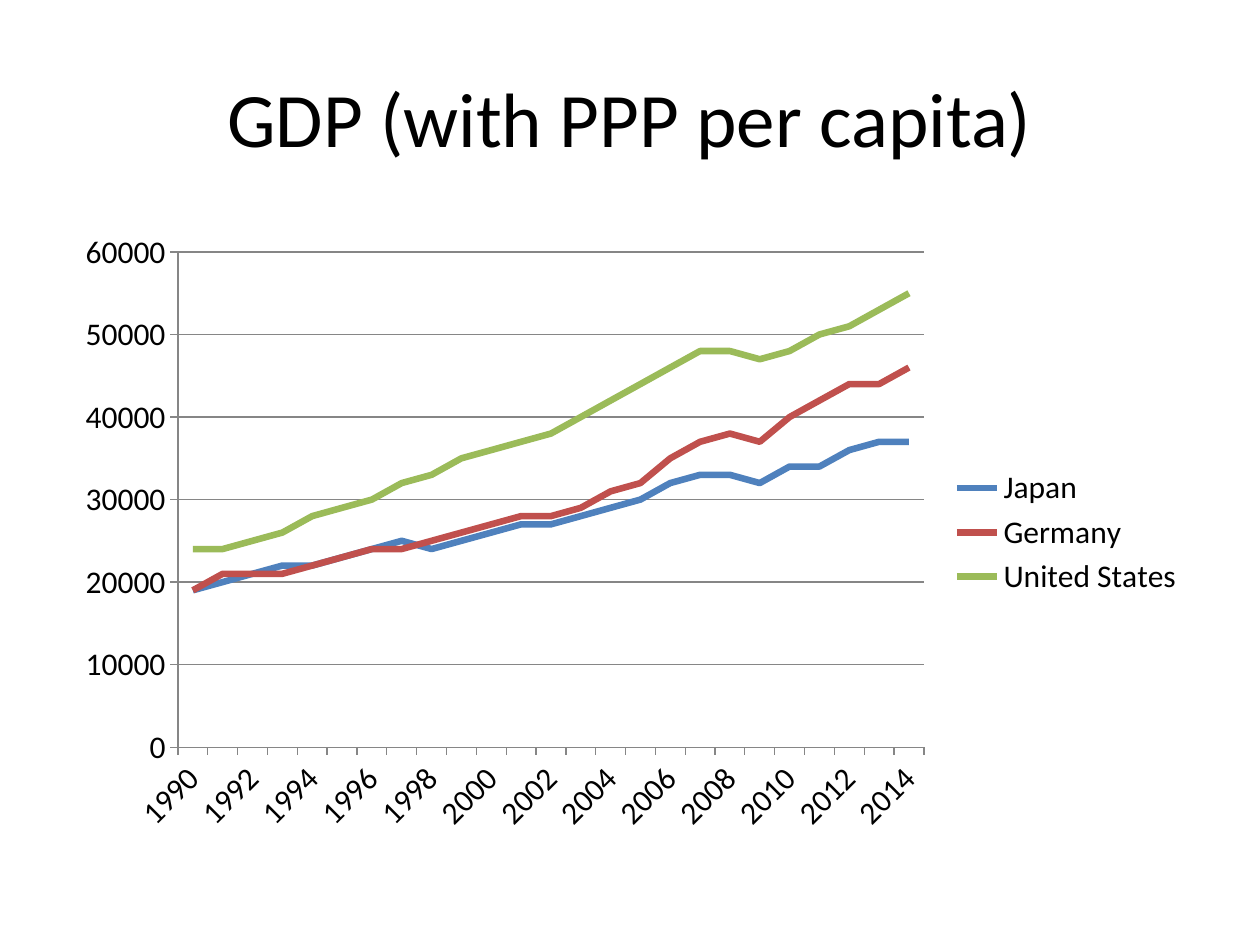
"""Build a slide with a line chart of GDP per capita in three countries."""
from pptx import Presentation
from pptx.chart.data import CategoryChartData
from pptx.dml.color import RGBColor
from pptx.enum.chart import XL_CHART_TYPE, XL_LEGEND_POSITION, XL_MARKER_STYLE, XL_TICK_MARK
from pptx.enum.text import MSO_ANCHOR, PP_ALIGN
from pptx.util import Inches, Pt

TITLE = "GDP (with PPP per capita)"
YEARS = [str(year) for year in range(1990, 2015)]
GDP_IN_THOUSANDS = {
    "Japan": [
        19, 20, 21, 22, 22, 23, 24, 25, 24, 25, 26, 27, 27,
        28, 29, 30, 32, 33, 33, 32, 34, 34, 36, 37, 37],
    "Germany": [
        19, 21, 21, 21, 22, 23, 24, 24, 25, 26, 27, 28, 28,
        29, 31, 32, 35, 37, 38, 37, 40, 42, 44, 44, 46],
    "United States": [
        24, 24, 25, 26, 28, 29, 30, 32, 33, 35, 36, 37, 38,
        40, 42, 44, 46, 48, 48, 47, 48, 50, 51, 53, 55],
}
THEME = {
    "font": "Calibri", "text": "000000", "axis": "868686",
    "series": ["4F81BD", "C0504D", "9BBB59"],
    "title_size": 44, "chart_size": 18, "series_width": 3.75, "axis_width": 0.75,
}
WIDTH, HEIGHT = Inches(10), Inches(7.5)
TITLE_BOX = (0.05, 0.04, 0.9, 1 / 6)
CHART_BOX = (0.05, 7 / 30, 0.9, 0.66)


def place(left, top, width, height):
    """Turn shares of the slide into lengths."""
    return int(left * WIDTH), int(top * HEIGHT), int(width * WIDTH), int(height * HEIGHT)


def style_font(font, size):
    """Apply the theme's typeface and text colour."""
    font.name = THEME["font"]
    font.size = Pt(size)
    font.color.rgb = RGBColor.from_string(THEME["text"])


def style_line(line, color, width):
    """Set the colour and width of a line."""
    line.color.rgb = RGBColor.from_string(color)
    line.width = Pt(width)


def add_text(slide, text, box, size, align):
    """Add a wrapped, vertically centred text box."""
    frame = slide.shapes.add_textbox(*place(*box)).text_frame
    frame.word_wrap = True
    frame.vertical_anchor = MSO_ANCHOR.MIDDLE
    paragraph = frame.paragraphs[0]
    paragraph.alignment = align
    run = paragraph.add_run()
    run.text = text
    style_font(run.font, size)


def add_gdp_chart(slide):
    """Add the line chart with its axes and legend."""
    data = CategoryChartData(number_format="General")
    data.categories = YEARS
    for country, thousands in GDP_IN_THOUSANDS.items():
        data.add_series(country, [value * 1000 for value in thousands])
    chart = slide.shapes.add_chart(XL_CHART_TYPE.LINE, *place(*CHART_BOX), data).chart
    style_font(chart.font, THEME["chart_size"])
    chart.has_title = False
    chart.has_legend = True
    chart.legend.position = XL_LEGEND_POSITION.RIGHT
    chart.legend.include_in_layout = False
    chart.plots[0].vary_by_categories = False
    for series, color in zip(chart.plots[0].series, THEME["series"]):
        series.smooth = False
        series.marker.style = XL_MARKER_STYLE.NONE
        style_line(series.format.line, color, THEME["series_width"])

    value_axis, category_axis = chart.value_axis, chart.category_axis
    value_axis.minimum_scale, value_axis.maximum_scale = 0, 60000
    value_axis.major_unit = 10000
    value_axis.has_major_gridlines = True
    for axis in (value_axis, category_axis):
        axis.major_tick_mark = XL_TICK_MARK.OUTSIDE
        style_font(axis.tick_labels.font, THEME["chart_size"])
    for part in (value_axis, category_axis, value_axis.major_gridlines):
        style_line(part.format.line, THEME["axis"], THEME["axis_width"])
    category_axis._element.txPr.bodyPr.set("rot", "-2700000")


def main():
    """Create and save the presentation."""
    presentation = Presentation()
    presentation.slide_width, presentation.slide_height = WIDTH, HEIGHT
    slide = presentation.slides.add_slide(presentation.slide_layouts[6])
    add_text(slide, TITLE, TITLE_BOX, size=THEME["title_size"], align=PP_ALIGN.CENTER)
    add_gdp_chart(slide)
    presentation.save("out.pptx")


if __name__ == "__main__":
    main()
